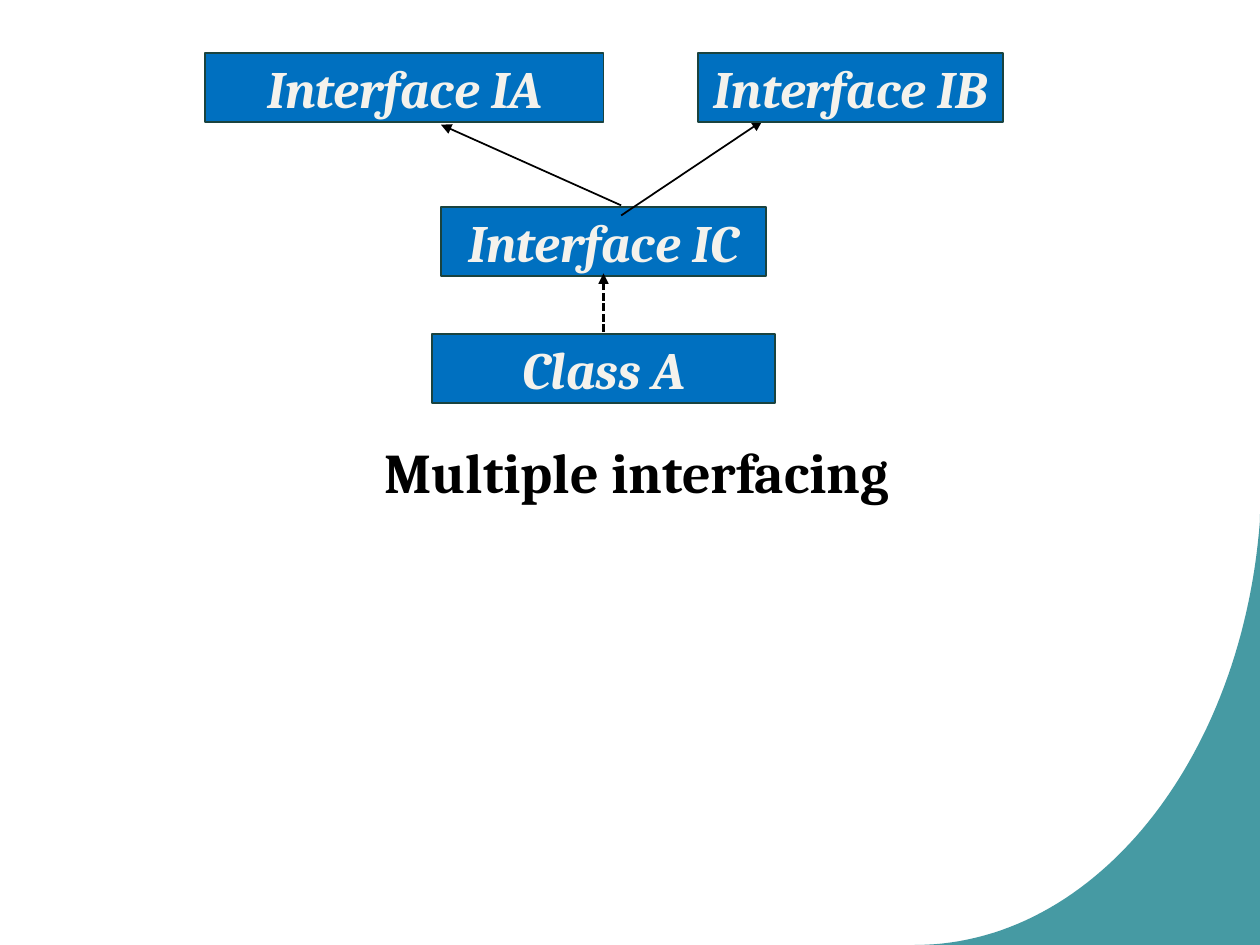
from lxml import etree
from pptx import Presentation
from pptx.dml.color import RGBColor
from pptx.enum.dml import MSO_LINE
from pptx.enum.shapes import MSO_CONNECTOR, MSO_SHAPE
from pptx.enum.text import MSO_ANCHOR, PP_ALIGN
from pptx.oxml.ns import qn
from pptx.util import Inches, Pt

TEAL = RGBColor(0x18, 0x81, 0x8C)
BLUE = RGBColor(0x00, 0x70, 0xC0)
DARK_GREEN = RGBColor(0x1A, 0x43, 0x3F)
CREAM = RGBColor(0xF4, 0xF2, 0xEC)
BLACK = RGBColor(0x00, 0x00, 0x00)
BOX_HEIGHT = 0.55


def add_bold_text(tf, text, size, color, italic=False):
    p = tf.paragraphs[0]
    p.alignment = PP_ALIGN.CENTER
    r = p.add_run()
    r.text = text
    r.font.name = "Cambria"
    r.font.size = Pt(size)
    r.font.bold = True
    r.font.italic = italic
    r.font.color.rgb = color


prs = Presentation()
prs.slide_width, prs.slide_height = Inches(10), Inches(7.5)
s = prs.slides.add_slide(prs.slide_layouts[6])

# Corner swoosh: points along a cubic Bezier curve, closed at the corner
curve = [(7.26, 7.5), (8.69, 7.5), (9.86, 6.02), (10, 4.13)]
STEPS = 60
points = []
for step in range(STEPS + 1):
    t = step / STEPS
    weights = ((1 - t) ** 3, 3 * t * (1 - t) ** 2, 3 * t ** 2 * (1 - t), t ** 3)
    points.append(tuple(Inches(sum(w * c[axis] for w, c in zip(weights, curve)))
                        for axis in (0, 1)))
points += [(Inches(10), Inches(4.08)), (Inches(10), Inches(7.5))]
builder = s.shapes.build_freeform(*points[0])
builder.add_line_segments(points[1:], close=True)
swoosh = builder.convert_to_shape()
swoosh.shadow.inherit = False
swoosh.fill.solid()
swoosh.fill.fore_color.rgb = TEAL
swoosh.line.fill.background()
color = swoosh.fill._xPr.find(qn("a:solidFill"))[0]
etree.SubElement(color, qn("a:alpha"), val="80000")

# Diagram from back to front: each box, then the arrow drawn over it
# (text, left, top, width), (x1, y1, x2, y2, line width, dashed)
diagram = [
    (("Interface IA", 1.63, 0.42, 3.16), (4.93, 1.63, 3.5, 0.99, 1, False)),
    (("Interface IC", 3.5, 1.64, 2.58), (4.93, 1.71, 6.05, 0.96, 1, False)),
    (("Interface IB", 5.54, 0.42, 2.42), (4.79, 2.72, 4.79, 2.17, 1.5, True)),
    (("Class A", 3.43, 2.65, 2.72), None),
]
for (text, left, top, width), arrow in diagram:
    box = s.shapes.add_shape(MSO_SHAPE.RECTANGLE, Inches(left), Inches(top),
                             Inches(width), Inches(BOX_HEIGHT))
    box.shadow.inherit = False
    box.fill.solid()
    box.fill.fore_color.rgb = BLUE
    box.line.color.rgb = DARK_GREEN
    box.line.width = Pt(1)
    box.text_frame.vertical_anchor = MSO_ANCHOR.MIDDLE
    add_bold_text(box.text_frame, text, 30, CREAM, italic=True)

    if arrow:
        *ends, weight, dashed = arrow
        line = s.shapes.add_connector(MSO_CONNECTOR.STRAIGHT, *map(Inches, ends))
        line.line.color.rgb = BLACK
        line.line.width = Pt(weight)
        if dashed:
            line.line.dash_style = MSO_LINE.SQUARE_DOT
        etree.SubElement(line.line._get_or_add_ln(), qn("a:tailEnd"), type="triangle")
        etree.SubElement(line._element.spPr, qn("a:effectLst"))

caption = s.shapes.add_textbox(Inches(2.2), Inches(3.42), Inches(5.71), Inches(0.64))
caption.text_frame.word_wrap = True
add_bold_text(caption.text_frame, "Multiple interfacing", 32, BLACK)

prs.save("out.pptx")
